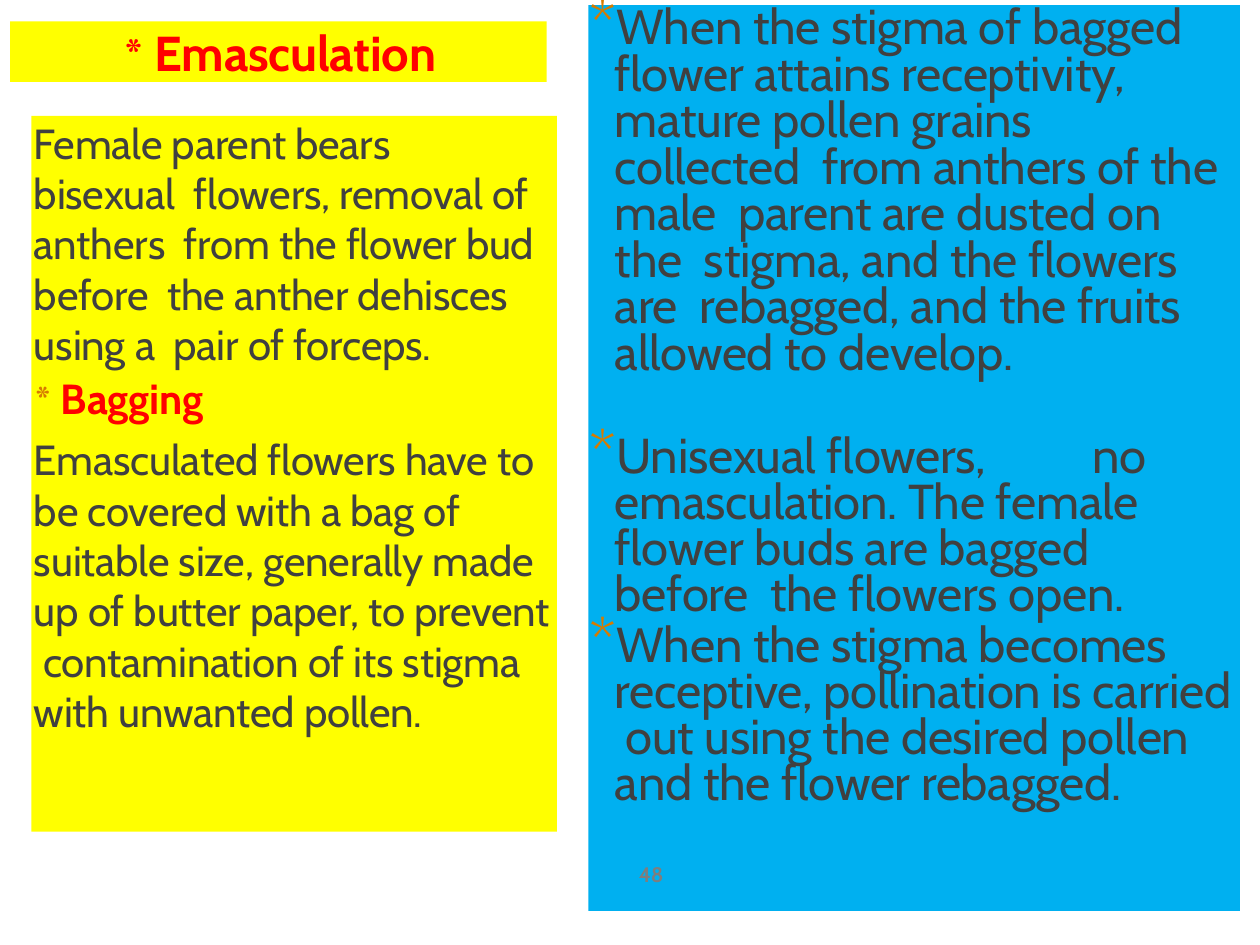
"""Build the slide on emasculation, bagging and pollination."""
from lxml import etree
from pptx import Presentation
from pptx.dml.color import RGBColor
from pptx.enum.text import PP_ALIGN
from pptx.oxml.ns import qn
from pptx.util import Inches, Pt

CENTER = PP_ALIGN.CENTER
LEFT = PP_ALIGN.LEFT
RED, ORANGE, DARK, GRAY = "FF0000", "D67B00", "404040", "7E7E7E"
YELLOW, BLUE = "FFFF00", "00B0F0"
HANG = 0.21


def color(value):
    return RGBColor.from_string(value)


def add_bullet(para, tabs):
    properties = para._p.get_or_add_pPr()
    properties.set("marL", str(Inches(HANG)))
    properties.set("indent", str(Inches(-0.2)))
    bullet_color = etree.SubElement(properties, qn("a:buClr"))
    etree.SubElement(bullet_color, qn("a:srgbClr"), val=ORANGE)
    etree.SubElement(properties, qn("a:buSzPct"), val="129000")
    etree.SubElement(properties, qn("a:buFont"), typeface="Cabin")
    etree.SubElement(properties, qn("a:buChar"), char="*")
    tab_list = etree.SubElement(properties, qn("a:tabLst"))
    for position in tabs:
        etree.SubElement(tab_list, qn("a:tab"), pos=str(Inches(position)), algn="l")


heading = {"size": Pt(28), "name": "Cabin", "bold": True, "color": RED}
heading_star = {"size": Pt(28), "name": "Cambria", "color": RED}
body = {"size": Pt(24), "name": "Cabin", "color": DARK}
body_star = {"size": Pt(24), "name": "Cambria", "color": ORANGE}
subheading = {"size": Pt(24), "name": "Cabin", "bold": True, "color": RED}
large = {"size": Pt(28), "name": "Cabin", "color": DARK}
number = {"size": Pt(12), "name": "Cabin", "bold": True, "color": GRAY}

removal = ("Female parent bears bisexual  flowers, removal of anthers  from the "
           "flower bud before  the anther dehisces using a  pair of forceps.")
bagging = ("Emasculated flowers have to  be covered with a bag of  suitable size, "
           "generally made  up of butter paper, to prevent  contamination of its "
           "stigma  with unwanted pollen.")
dusting = ("When the stigma of bagged  flower attains receptivity,  mature pollen "
           "grains collected  from anthers of the male  parent are dusted on the  "
           "stigma, and the flowers are  rebagged, and the fruits  allowed to develop.")
unisexual = ("Unisexual flowers,\tno  emasculation. The female  flower buds are "
             "bagged before  the flowers open.")
pollination = ("When the stigma becomes  receptive, pollination is carried  out using "
               "the desired pollen  and the flower rebagged.")

boxes = [
    {"at": (0.08, 0.17, 4.26, 0.48), "fill": YELLOW, "top": 0.01, "margin": 0.02,
     "align": CENTER,
     "paras": [{"runs": [("* ", heading_star), ("Emasculation", heading)]}]},
    {"at": (0.25, 0.92, 4.17, 5.68), "fill": YELLOW, "top": 0.01, "margin": 0.02,
     "paras": [{"right": 0.15, "runs": [(removal, body)]},
               {"before": 1.8, "runs": [("* ", body_star), ("Bagging", subheading)]},
               {"before": 6.2, "runs": [(bagging, body)]}]},
    {"at": (4.67, 0.04, 5.17, 7.19), "fill": BLUE, "top": 0.02, "margin": 0,
     "paras": [{"line": 0.79, "right": 0.12, "tabs": [HANG], "runs": [(dusting, large)]},
               {"line": 0.78, "before": 33, "right": 0.3, "tabs": [HANG, 4],
                "runs": [(unisexual, large)]},
               {"line": 0.78, "before": 3, "tabs": [HANG],
                "runs": [(pollination, large)]}]},
    {"at": (5.03, 6.84, 0.28, 0.22), "top": 0, "margin": 0.04,
     "paras": [{"runs": [("48", number)]}]},
]

deck = Presentation()
deck.slide_width, deck.slide_height = Inches(10), Inches(7.5)
page = deck.slides.add_slide(deck.slide_layouts[6])

for item in boxes:
    box = page.shapes.add_textbox(*map(Inches, item["at"]))
    if "fill" in item:
        box.fill.solid()
        box.fill.fore_color.rgb = color(item["fill"])
    frame = box.text_frame
    layout = {"word_wrap": True, "margin_left": Inches(item["margin"]),
              "margin_right": 0, "margin_top": Inches(item["top"]), "margin_bottom": 0}
    for key, value in layout.items():
        setattr(frame, key, value)
    for index, content in enumerate(item["paras"]):
        para = frame.add_paragraph() if index else frame.paragraphs[0]
        para._p.get_or_add_pPr().set("marR", str(Inches(content.get("right", 0))))
        if "tabs" in content:
            add_bullet(para, content["tabs"])
        spacing = {"alignment": item.get("align", LEFT),
                   "line_spacing": content.get("line", 1.0),
                   "space_before": Pt(content.get("before", 0))}
        for key, value in spacing.items():
            setattr(para, key, value)
        for text, style in content["runs"]:
            span = para.add_run()
            span.text = text
            span._r.get_or_add_rPr().set("spc", "-10")
            for key, value in style.items():
                if key == "color":
                    span.font.color.rgb = color(value)
                else:
                    setattr(span.font, key, value)

deck.save("out.pptx")
